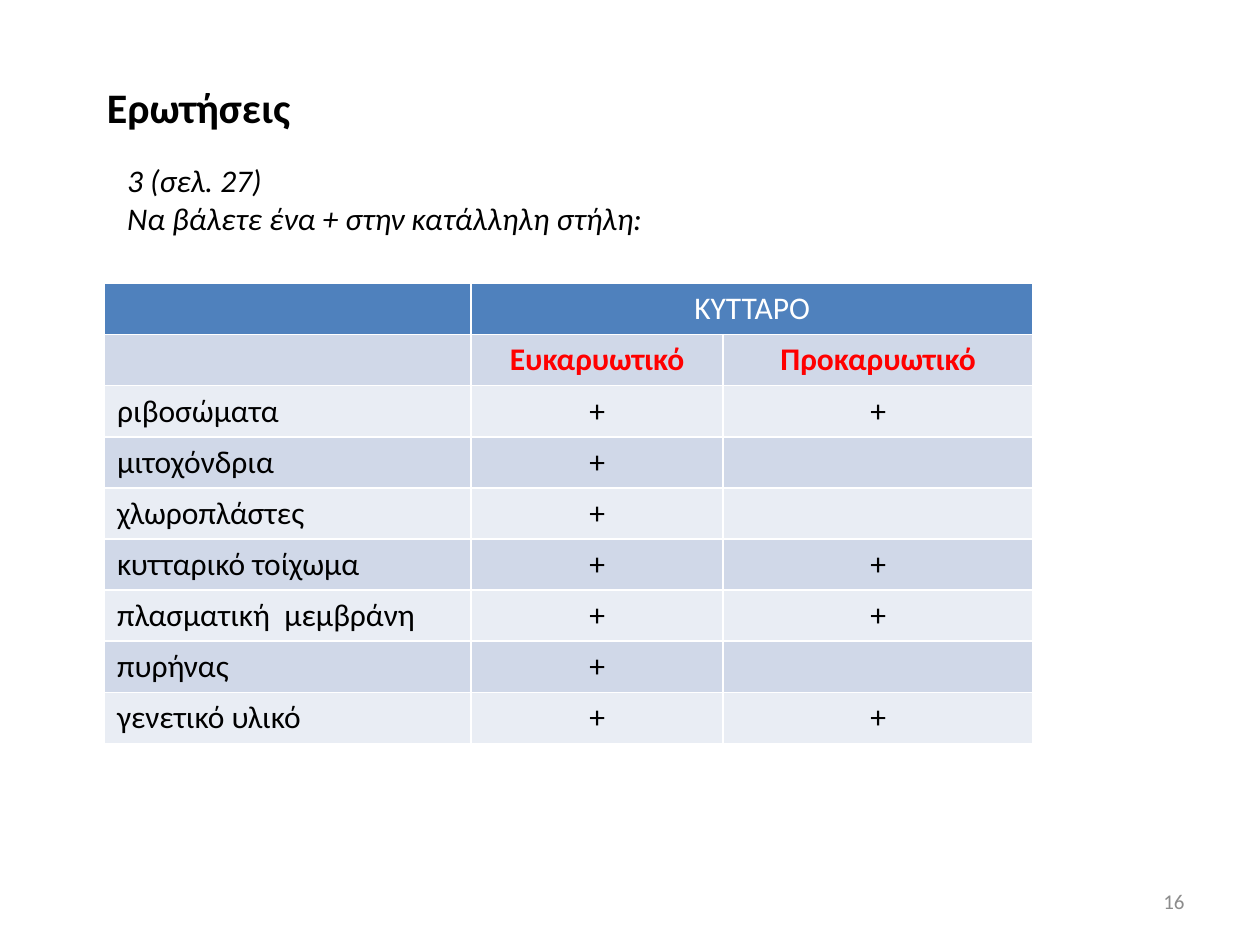
from lxml import etree
from pptx import Presentation
from pptx.dml.color import RGBColor
from pptx.enum.text import MSO_ANCHOR, PP_ALIGN
from pptx.oxml.ns import qn
from pptx.util import Inches, Pt

LEFT, MID, RIGHT = PP_ALIGN.LEFT, PP_ALIGN.CENTER, PP_ALIGN.RIGHT
TOP, CENTRE = MSO_ANCHOR.TOP, MSO_ANCHOR.MIDDLE
WIDE, HIGH = 10, 7.5
BLACK, WHITE, RED, GREY = "000000", "FFFFFF", "FF0000", "8C8C8C"
HEAD, BANDS = "4F81BD", ("D0D8E8", "E9EDF4")

COLS = (2.91, 2, 2.46)
ROWS = [
    ("", "ΚΥΤΤΑΡΟ", ""),
    ("", "Ευκαρυωτικό", "Προκαρυωτικό"),
    ("ριβοσώματα", "+", "+"),
    ("μιτοχόνδρια", "+", ""),
    ("χλωροπλάστες", "+", ""),
    ("κυτταρικό τοίχωμα", "+", "+"),
    ("πλασματική  μεμβράνη", "+", "+"),
    ("πυρήνας", "+", ""),
    ("γενετικό υλικό", "+", "+"),
]


def paint(code):
    return RGBColor.from_string(code)


class Page:
    """Holds the text style and the current slide."""

    base = {"name": "Calibri", "size": Pt(18), "bold": False, "italic": False}

    def __init__(self, deck):
        self.slide = deck.slides.add_slide(deck.slide_layouts[6])

    def put(self, frame, lines, color=BLACK, align=LEFT, **style):
        for i, line in enumerate(lines):
            para = frame.paragraphs[0] if i == 0 else frame.add_paragraph()
            para.alignment = align
            run = para.add_run()
            run.text = line
            for key, value in {**self.base, **style}.items():
                setattr(run.font, key, value)
            run.font.color.rgb = paint(color)

    def text(self, box, lines, wrap=False, anchor=TOP, **style):
        frame = self.slide.shapes.add_textbox(*map(Inches, box)).text_frame
        frame.word_wrap = wrap
        frame.vertical_anchor = anchor
        self.put(frame, lines, **style)

    def edge(self, cell):
        props = cell._tc.get_or_add_tcPr()
        for side in ("lnL", "lnR", "lnT", "lnB"):
            line = etree.SubElement(props, qn("a:" + side), w=str(Pt(1)))
            fill = etree.SubElement(line, qn("a:solidFill"))
            etree.SubElement(fill, qn("a:srgbClr"), val=WHITE)

    def table(self, box, rows, cols):
        shape = self.slide.shapes.add_table(len(rows), len(cols), *map(Inches, box))
        grid = shape.table
        for col, width in zip(grid.columns, cols):
            col.width = Inches(width)
        for r, row in enumerate(rows):
            # Header row, red subheads, then plain body rows
            color = (WHITE, RED)[r] if r < 2 else BLACK
            for c, word in enumerate(row):
                cell = grid.cell(r, c)
                self.edge(cell)
                cell.fill.solid()
                cell.fill.fore_color.rgb = paint(BANDS[(r - 1) % 2] if r else HEAD)
                if word:
                    self.put(cell.text_frame, [word], color=color,
                             align=MID if c else LEFT, bold=r == 1)
        grid.cell(0, 1).merge(grid.cell(0, 2))


def main():
    deck = Presentation()
    deck.slide_width, deck.slide_height = Inches(WIDE), Inches(HIGH)
    page = Page(deck)

    # Title and task
    page.text((0.75, 0.6, 1.67, 0.5), ["Ερωτήσεις"], size=Pt(24), bold=True)
    page.text((0.91, 1.23, 4.35, 0.71),
              ["3 (σελ. 27)", "Να βάλετε ένα + στην κατάλληλη στήλη:"],
              italic=True)

    # Cell parts by cell type
    page.table((0.83, 2.25, sum(COLS), 3.65), ROWS, COLS)

    # Page number
    page.text((7.17, 6.95, 2.33, 0.4), ["16"], wrap=True, anchor=CENTRE,
              size=Pt(12), color=GREY, align=RIGHT)

    deck.save("out.pptx")


if __name__ == "__main__":
    main()
